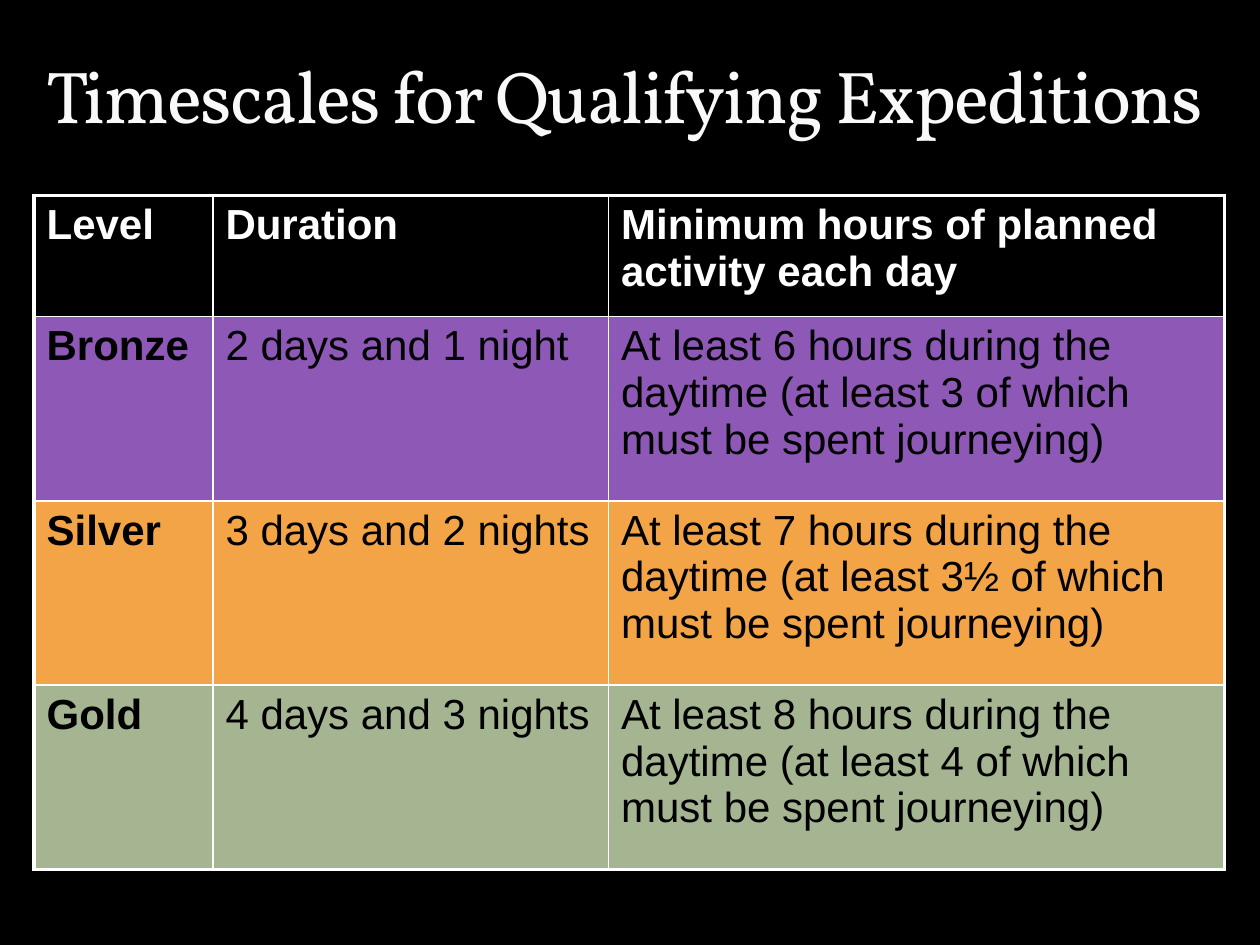
from lxml.etree import SubElement
from pptx import Presentation
from pptx.dml.color import RGBColor
from pptx.enum.text import MSO_ANCHOR, PP_ALIGN
from pptx.oxml.ns import qn
from pptx.util import Inches, Pt

WIDTH, HEIGHT = Inches(10), Inches(7.5)
MARGIN, CONTENT_WIDTH = 0.027, 0.945
COLUMN_SHARES = (0.142, 0.314, 0.489)
ROW_SHARES = (0.128, 0.195, 0.195, 0.195)
COLORS = {
    "background": "000000",
    "title": "F9F9F9",
    "border": "FFFFFF",
    "header_text": "FFFFFF",
    "body_text": "000000",
    "Level": "000000",
    "Bronze": "8E58B6",
    "Silver": "F3A447",
    "Gold": "A5B592",
}
TITLE_FORMAT = {"name": "Vollkorn", "size": Pt(42), "bold": False}
CELL_FORMAT = {"name": "Arial", "size": Pt(24)}
TIMESCALES = [
    ("Level", "Duration", "Minimum hours of planned activity each day"),
    ("Bronze", "2 days and 1 night",
     "At least 6 hours during the daytime (at least 3 of which must be spent journeying)"),
    ("Silver", "3 days and 2 nights",
     "At least 7 hours during the daytime (at least 3½ of which must be spent journeying)"),
    ("Gold", "4 days and 3 nights",
     "At least 8 hours during the daytime (at least 4 of which must be spent journeying)"),
]


def color(key):
    return RGBColor.from_string(COLORS[key])


def apply_format(target, values):
    for attribute, value in values.items():
        setattr(target, attribute, value)


def write(frame, text, font_format, color_key):
    run = frame.paragraphs[0].add_run()
    run.text = text
    apply_format(run.font, font_format)
    run.font.color.rgb = color(color_key)
    return run


def add_title(slide, text):
    title = slide.shapes.add_textbox(
        int(WIDTH * MARGIN), 0, int(WIDTH * CONTENT_WIDTH), int(HEIGHT * 0.153))
    frame = title.text_frame
    apply_format(frame, {"word_wrap": True, "vertical_anchor": MSO_ANCHOR.BOTTOM})
    frame.paragraphs[0].alignment = PP_ALIGN.LEFT
    run = write(frame, text, TITLE_FORMAT, "title")
    run.font._element.set("spc", "-100")


def add_borders(cell, widths):
    properties = cell._tc.get_or_add_tcPr()
    for position, (side, width) in enumerate(widths.items()):
        line = SubElement(properties, qn(f"a:{side}"), w=str(Pt(width)))
        fill = SubElement(line, qn("a:solidFill"))
        SubElement(fill, qn("a:srgbClr"), val=COLORS["border"])
        properties.remove(line)
        properties.insert(position, line)


def add_timescale_table(slide):
    row_count, column_count = len(ROW_SHARES), len(COLUMN_SHARES)
    table = slide.shapes.add_table(
        row_count, column_count, int(WIDTH * MARGIN), int(HEIGHT * 0.207),
        int(WIDTH * CONTENT_WIDTH), int(HEIGHT * sum(ROW_SHARES))).table
    apply_format(table, {"first_row": False, "horz_banding": False})
    for column, share in zip(table.columns, COLUMN_SHARES):
        column.width = int(WIDTH * share)
    for row, share in zip(table.rows, ROW_SHARES):
        row.height = int(HEIGHT * share)
    for r, entries in enumerate(TIMESCALES):
        for c, text in enumerate(entries):
            cell = table.cell(r, c)
            cell.fill.solid()
            cell.fill.fore_color.rgb = color(entries[0])
            write(cell.text_frame, text, {**CELL_FORMAT, "bold": r == 0 or c == 0},
                  "header_text" if r == 0 else "body_text")
            add_borders(cell, {
                "lnL": 2.25 if c == 0 else 1,
                "lnR": 2.25 if c == column_count - 1 else 1,
                "lnT": 2.25 if r == 0 else 1,
                "lnB": 2.25 if r == row_count - 1 else 1,
            })


def main():
    presentation = Presentation()
    apply_format(presentation, {"slide_width": WIDTH, "slide_height": HEIGHT})
    slide = presentation.slides.add_slide(presentation.slide_layouts[6])
    slide.background.fill.solid()
    slide.background.fill.fore_color.rgb = color("background")
    add_title(slide, "Timescales for Qualifying Expeditions")
    add_timescale_table(slide)
    presentation.save("out.pptx")


if __name__ == "__main__":
    main()
